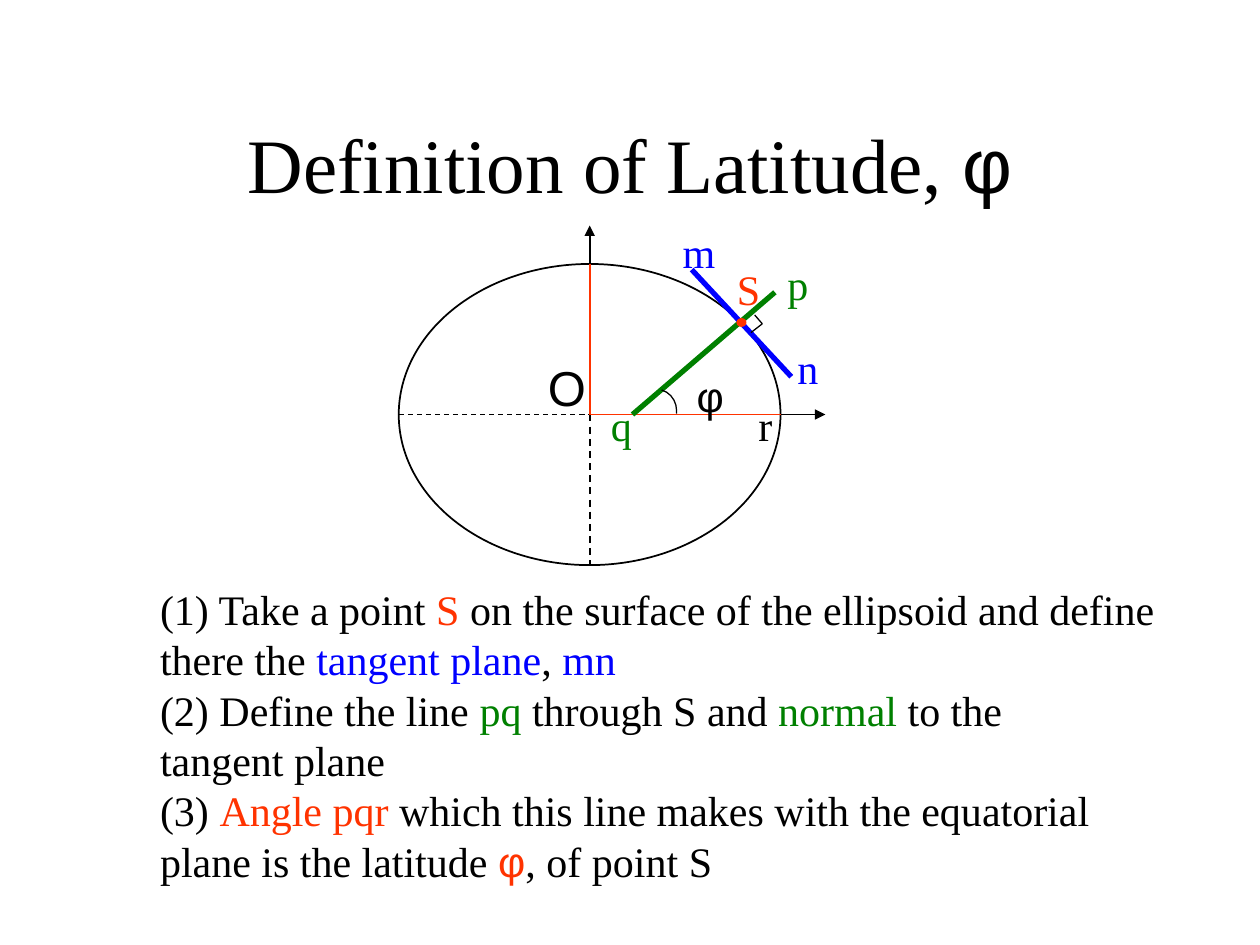
from lxml.etree import SubElement
from pptx import Presentation
from pptx.dml.color import RGBColor
from pptx.enum.dml import MSO_LINE
from pptx.enum.shapes import MSO_CONNECTOR, MSO_SHAPE
from pptx.enum.text import MSO_ANCHOR, MSO_AUTO_SIZE, PP_ALIGN
from pptx.oxml.ns import qn
from pptx.util import Inches, Pt

COLORS = {"black": "000000", "red": "FF3300", "blue": "0000FF", "green": "008000"}
SERIF, SANS = "Times New Roman", "Arial"

prs = Presentation()
prs.slide_width, prs.slide_height = Inches(10), Inches(7.5)
COL, ROW = prs.slide_width / 100, prs.slide_height / 75
slide = prs.slides.add_slide(prs.slide_layouts[1])
shapes = slide.shapes


def place(left, top, width, height):
    """Grid columns and rows to a position and size."""
    return [round(left * COL), round(top * ROW), round(width * COL), round(height * ROW)]


def write(paragraph, text, color="black", size=24, font=SERIF):
    run = paragraph.add_run()
    run.text = text
    for key, value in {"size": Pt(size), "name": font}.items():
        setattr(run.font, key, value)
    run.font.color.rgb = RGBColor.from_string(COLORS[color])


# Title and steps in the template's placeholders
title, steps = shapes.title, slide.placeholders[1]
for holder, box, anchor in (
    (title, (7.5, 6.7, 85, 12.5), MSO_ANCHOR.MIDDLE),
    (steps, (11.7, 45.8, 85.8, 25), MSO_ANCHOR.TOP),
):
    for key, value in zip(("left", "top", "width", "height"), place(*box)):
        setattr(holder, key, value)
    frame_format = {"vertical_anchor": anchor, "word_wrap": True, "auto_size": MSO_AUTO_SIZE.NONE}
    for key, value in frame_format.items():
        setattr(holder.text_frame, key, value)

heading = title.text_frame.paragraphs[0]
heading.alignment = PP_ALIGN.CENTER
write(heading, "Definition of Latitude, ", size=44)
write(heading, "φ", size=44, font=SANS)

step_lines = [
    [("(1) Take a point ",), ("S", "red"),
     (" on the surface of the ellipsoid and define there the ",),
     ("tangent plane", "blue"), (", ",), ("mn", "blue")],
    [("(2) Define the line ",), ("pq", "green"), (" through S and ",),
     ("normal", "green"), (" to the",)],
    [("tangent plane",)],
    [("(3) ",), ("Angle pqr", "red"), (" which this line makes with the equatorial",)],
    [("plane is the latitude ",), ("φ", "red", 24, SANS), (", of point S",)],
]
for number, pieces in enumerate(step_lines):
    frame = steps.text_frame
    line = frame.add_paragraph() if number else frame.paragraphs[0]
    line.alignment, line.space_before = PP_ALIGN.LEFT, Pt(0)
    properties = line._p.get_or_add_pPr()
    for key in ("marL", "indent"):
        properties.set(key, "0")
    SubElement(properties, qn("a:buNone"))
    for piece in pieces:
        write(line, *piece)

# Ellipsoid section, centred on the origin O
center_x, center_y = 46.8, 32.9
radius_x, radius_y = 15.15, 11.95
left, right = center_x - radius_x, center_x + radius_x
top, bottom = center_y - radius_y, center_y + radius_y
ellipsoid = shapes.add_shape(
    MSO_SHAPE.OVAL, *place(left, top, 2 * radius_x, 2 * radius_y))
ellipsoid.fill.background()
ellipsoid.line.width = Pt(1)

# Axes, tangent plane, normal and right-angle mark
origin = (center_x, center_y)
corner = (60.5, 25.7)
for start, end, color, width, style in (
    ((left, center_y), origin, "black", 0.75, "dash"),
    ((right, center_y), (65.5, center_y), "black", 1, "arrow"),
    (origin, (center_x, 17.9), "black", 1, "arrow"),
    (origin, (right, center_y), "red", 1, "solid"),
    ((center_x, top), origin, "red", 1, "solid"),
    (origin, (center_x, bottom), "black", 1, "dash"),
    ((54.9, 21.4), (62.8, 29.9), "blue", 3, "solid"),
    ((61.5, 23.2), (50.2, center_y), "green", 3, "solid"),
    ((59.9, 25), corner, "black", 0.75, "solid"),
    (corner, (59.6, 26.4), "black", 0.75, "solid"),
):
    connector = shapes.add_connector(MSO_CONNECTOR.STRAIGHT, *place(*start, *end))
    connector.line.color.rgb = RGBColor.from_string(COLORS[color])
    connector.line.width = Pt(width)
    if style == "dash":
        connector.line.dash_style = MSO_LINE.DASH
    if style == "arrow":
        SubElement(connector.line._get_or_add_ln(), qn("a:tailEnd"), type="triangle")
    SubElement(connector._element.spPr, qn("a:effectLst"))

# Point S
point_s = shapes.add_shape(MSO_SHAPE.OVAL, *place(58.5, 25.3, 0.7, 0.6))
point_s.fill.solid()
point_s.fill.fore_color.rgb = RGBColor.from_string(COLORS["red"])

# Latitude angle; arc adjustments count 0.6 per degree
angle = shapes.add_shape(MSO_SHAPE.ARC, *place(50.5, 30.9, 3.2, 3.4))
angle.adjustments[0], angle.adjustments[1] = 284 * 0.6, 8 * 0.6
angle.fill.background()

for outline, color in ((ellipsoid, "black"), (point_s, "red"), (angle, "black")):
    outline.shadow.inherit = False
    outline.line.color.rgb = RGBColor.from_string(COLORS[color])
for thin in (point_s, angle):
    thin.line.width = Pt(0.75)

# Labels
for text, box, color, size, font in (
    ("O", (42.5, 27.9, 5, 5.7), "black", 28, SANS),
    ("φ", (54.3, 28.9, 3.8, 5), "black", 24, SANS),
    ("S", (57.5, 20.4, 3.9, 5), "red", 24, SERIF),
    ("m", (53.2, 17.5, 4.6, 5), "blue", 24, SERIF),
    ("n", (62.3, 26.7, 3.7, 5), "blue", 24, SERIF),
    ("q", (47.5, 31.2, 3.7, 5), "green", 24, SERIF),
    ("p", (61.5, 20, 3.7, 5), "green", 24, SERIF),
    ("r", (59.2, 31.2, 3.1, 5), "black", 24, SERIF),
):
    label = shapes.add_textbox(*place(*box)).text_frame
    label.word_wrap = False
    label.auto_size = MSO_AUTO_SIZE.SHAPE_TO_FIT_TEXT
    write(label.paragraphs[0], text, color, size, font)

prs.save("out.pptx")
